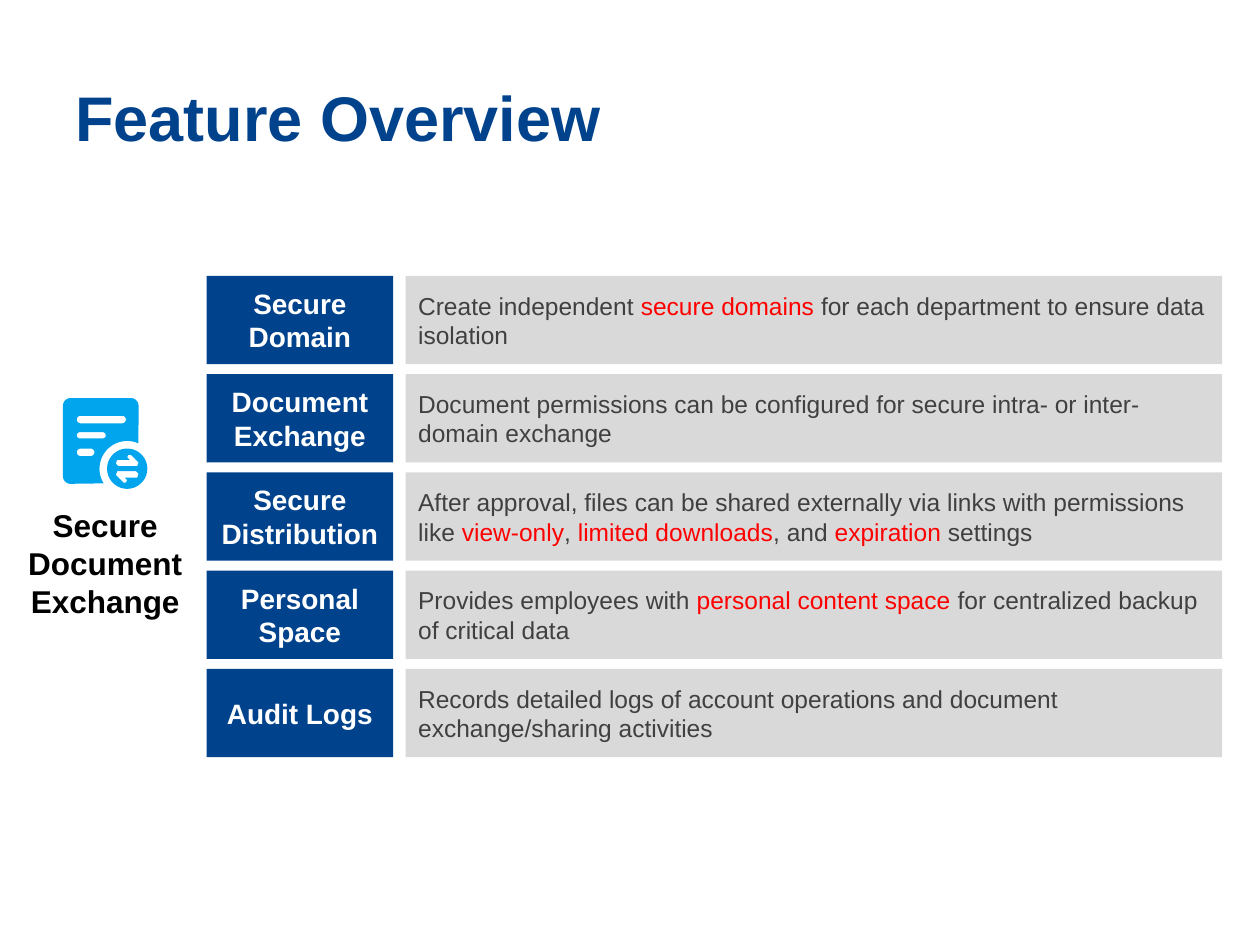
from dataclasses import dataclass
from math import cos, radians, sin

from pptx import Presentation
from pptx.dml.color import RGBColor as RGB
from pptx.enum.shapes import MSO_SHAPE as SHAPE
from pptx.enum.text import MSO_ANCHOR as ANCHOR, MSO_AUTO_SIZE as AUTO, PP_ALIGN as ALIGN
from pptx.util import Inches, Pt


@dataclass(frozen=True)
class Theme:
    font: str = "Arial"
    navy: RGB = RGB(0x00, 0x42, 0x8C)
    sky: RGB = RGB(0x00, 0xA5, 0xEE)
    panel: RGB = RGB(0xD9, 0xD9, 0xD9)
    body: RGB = RGB(0x40, 0x40, 0x40)
    accent: RGB = RGB(0xFF, 0x00, 0x00)
    black: RGB = RGB(0x00, 0x00, 0x00)
    white: RGB = RGB(0xFF, 0xFF, 0xFF)
    title_size: int = 36
    caption_size: int = 18
    label_size: int = 16
    body_size: int = 14


class Deck:
    def __init__(self, theme):
        self.theme = theme
        self.prs = Presentation()
        self.prs.slide_width, self.prs.slide_height = Inches(10), Inches(7.5)
        self.slide = self.prs.slides.add_slide(self.prs.slide_layouts[6])

    def set_text(self, sp, text, size, color, bold=False, align=ALIGN.LEFT, anchor=ANCHOR.MIDDLE):
        tf = sp.text_frame
        tf.word_wrap = True
        tf.vertical_anchor = anchor
        p = tf.paragraphs[0]
        p.alignment = align
        p.font.name, p.font.size, p.font.bold = self.theme.font, Pt(size), bold
        p.font.color.rgb = color
        for i, part in enumerate(text.split("*")):
            r = p.add_run()
            r.text = part
            if i % 2:
                r.font.color.rgb = self.theme.accent

    def paint(self, sp, color):
        sp.shadow.inherit = False
        sp.fill.solid()
        sp.fill.fore_color.rgb = color
        sp.line.fill.background()

    def text_box(self, box, text, size, color, **style):
        sp = self.slide.shapes.add_textbox(*map(Inches, box))
        self.set_text(sp, text, size, color, **style)
        return sp

    def panel(self, box, fill, text, size, color, **style):
        sp = self.slide.shapes.add_shape(SHAPE.RECTANGLE, *map(Inches, box))
        self.paint(sp, fill)
        self.set_text(sp, text, size, color, **style)

    def outline(self, contours, color):
        fb = None
        for contour in contours:
            start, *rest = [(Inches(x), Inches(y)) for x, y in contour]
            if fb is None:
                fb = self.slide.shapes.build_freeform(*start)
            else:
                fb.move_to(*start)
            fb.add_line_segments(rest, close=True)
        self.paint(fb.convert_to_shape(), color)


def arc(cx, cy, radius, start, end, steps=12):
    angles = [radians(start + (end - start) * i / steps) for i in range(steps + 1)]
    return [(cx + radius * cos(a), cy + radius * sin(a)) for a in angles]


def pill(left, top, width, height):
    radius = height / 2
    cy = top + radius
    return arc(left + radius, cy, radius, 90, 270) + arc(left + width - radius, cy, radius, -90, 90)


def exchange_icon():
    cx, cy = 1.01, 3.72
    page = (arc(0.56, 3.22, 0.06, 180, 270) + arc(1.04, 3.22, 0.06, 270, 360)
            + arc(cx, cy, 0.22, -66, -212, 24) + arc(0.56, 3.78, 0.06, 90, 180))
    badge = arc(cx, cy, 0.16, 0, 360, 36)
    lines = [pill(0.61, 3.3, 0.39, 0.06), pill(0.61, 3.43, 0.23, 0.05), pill(0.61, 3.56, 0.14, 0.06)]
    right_arrow = [(0.93, 3.65), (1.03, 3.65), (1.01, 3.63), (1.02, 3.61), (1.04, 3.61),
                   (1.1, 3.67), (1.09, 3.7), (0.94, 3.7), (0.92, 3.68)]
    left_arrow = [(2 * cx - x, 2 * cy - y) for x, y in right_arrow]
    return [page, badge, *lines, right_arrow, left_arrow]


FEATURES = [
    ("Secure Domain",
     "Create independent *secure domains* for each department to ensure data isolation"),
    ("Document Exchange",
     "Document permissions can be configured for secure intra- or inter-domain exchange"),
    ("Secure Distribution",
     "After approval, files can be shared externally via links with permissions like "
     "*view-only*, *limited downloads*, and *expiration* settings"),
    ("Personal Space",
     "Provides employees with *personal content space* for centralized backup of critical data"),
    ("Audit Logs",
     "Records detailed logs of account operations and document exchange/sharing activities"),
]


def main():
    theme = Theme()
    deck = Deck(theme)
    deck.text_box((0.5, 0.3, 9, 1.25), "Feature Overview", theme.title_size, theme.navy, bold=True)
    caption = deck.text_box((-0.19, 3.97, 2.05, 1.31), "Secure Document Exchange",
                            theme.caption_size, theme.black, bold=True,
                            align=ALIGN.CENTER, anchor=ANCHOR.TOP)
    caption.text_frame.auto_size = AUTO.SHAPE_TO_FIT_TEXT
    deck.outline(exchange_icon(), theme.sky)

    top, pitch, height = 2.19, 0.78, 0.7
    for i, (name, description) in enumerate(FEATURES):
        y = top + i * pitch
        deck.panel((1.64, y, 1.48, height), theme.navy, name, theme.label_size, theme.white,
                   bold=True, align=ALIGN.CENTER)
        deck.panel((3.22, y, 6.48, height), theme.panel, description, theme.body_size, theme.body)
    deck.prs.save("out.pptx")


if __name__ == "__main__":
    main()
